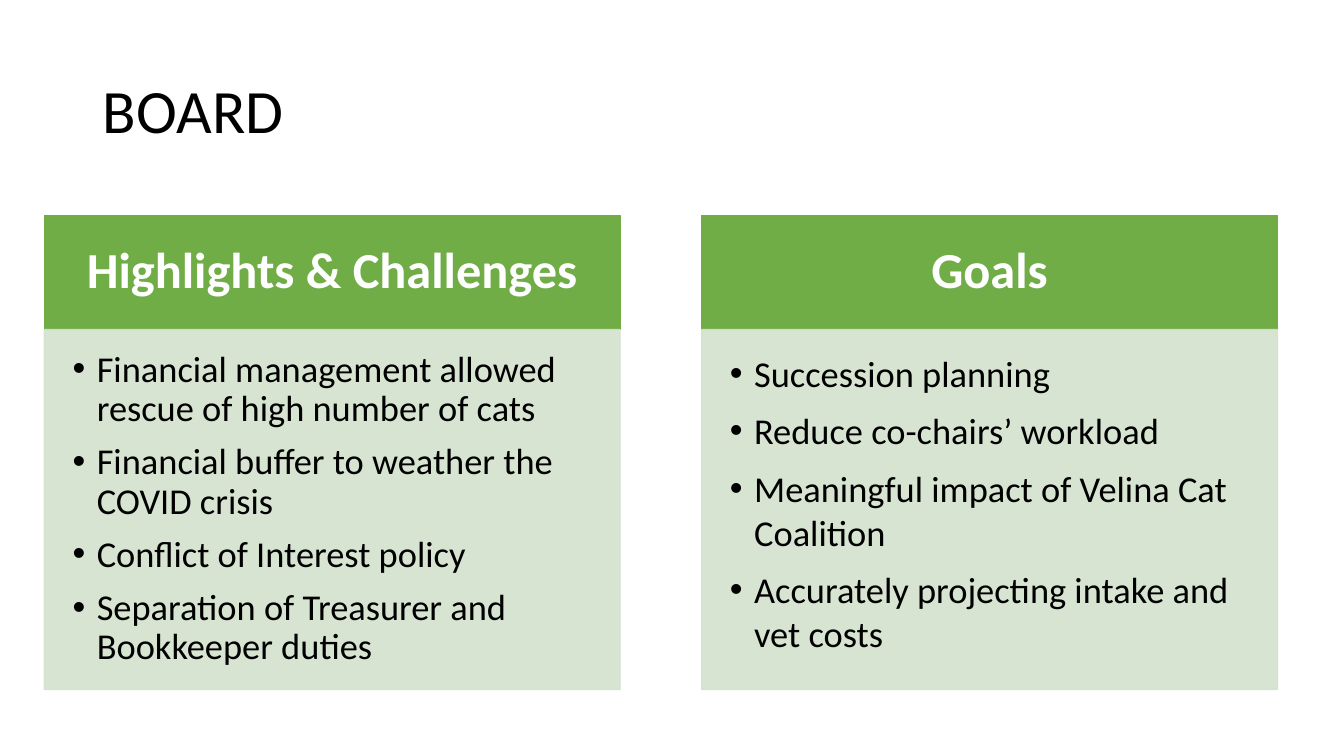
from lxml.etree import SubElement
from pptx import Presentation
from pptx.dml.color import RGBColor
from pptx.enum.shapes import MSO_SHAPE
from pptx.enum.text import MSO_ANCHOR, PP_ALIGN
from pptx.oxml.ns import qn
from pptx.util import Inches, Pt

FONT = "Calibri"
BLACK = RGBColor(0x00, 0x00, 0x00)
WHITE = RGBColor(0xFF, 0xFF, 0xFF)
GREEN = RGBColor(0x70, 0xAD, 0x47)
PALE_GREEN = RGBColor(0xD4, 0xE2, 0xCE)

PANEL_WIDTH = 5.71
HEADER_TOP, HEADER_HEIGHT = 2.14, 1.13
BODY_TOP, BODY_HEIGHT = HEADER_TOP + HEADER_HEIGHT, 3.57

# left edge, heading, line spacing of the list, list items
PANELS = [
    (0.44, "Highlights & Challenges", 0.9, [
        "Financial management allowed rescue of high number of cats",
        "Financial buffer to weather the COVID crisis",
        "Conflict of Interest policy",
        "Separation of Treasurer and Bookkeeper duties",
    ]),
    (6.96, "Goals", 1.0, [
        "Succession planning",
        "Reduce co-chairs’ workload",
        "Meaningful impact of Velina Cat Coalition",
        "Accurately projecting intake and vet costs",
    ]),
]


def set_font(p, size, color, bold=False):
    for r in p.runs:
        r.font.name = FONT
        r.font.size = Pt(size)
        r.font.bold = bold
        r.font.color.rgb = color


def set_opacity(s, percent):
    """Apply the opacity to both the fill and the line."""
    for clr in s._element.spPr.iter(qn("a:srgbClr")):
        SubElement(clr, qn("a:alpha"), val=str(percent * 1000))


def set_bullet(p):
    pPr = p._p.get_or_add_pPr()
    pPr.set("marL", str(Inches(0.31)))
    pPr.set("indent", str(Inches(-0.24)))
    clr = SubElement(pPr, qn("a:buClr"))
    SubElement(clr, qn("a:srgbClr"), val=str(BLACK))
    SubElement(pPr, qn("a:buFont"), typeface="Arial")
    SubElement(pPr, qn("a:buChar"), char="•")


def add_box(slide, left, top, height, color, insets, anchor):
    s = slide.shapes.add_shape(MSO_SHAPE.RECTANGLE, Inches(left), Inches(top),
                               Inches(PANEL_WIDTH), Inches(height))
    s.shadow.inherit = False
    s.fill.solid()
    s.fill.fore_color.rgb = color
    s.line.color.rgb = color
    s.line.width = Pt(1)
    tf = s.text_frame
    tf.word_wrap = True
    tf.vertical_anchor = anchor
    (tf.margin_left, tf.margin_top,
     tf.margin_right, tf.margin_bottom) = map(Inches, insets)
    return s


def add_header(slide, left, heading):
    s = add_box(slide, left, HEADER_TOP, HEADER_HEIGHT, GREEN,
                (0.28, 0.16, 0.28, 0.16), MSO_ANCHOR.MIDDLE)
    s.text_frame.text = heading
    p = s.text_frame.paragraphs[0]
    p.alignment = PP_ALIGN.CENTER
    p.line_spacing = 0.9
    set_font(p, 36, WHITE, bold=True)


def add_bullet_list(slide, left, items, line_spacing):
    s = add_box(slide, left, BODY_TOP, BODY_HEIGHT, PALE_GREEN,
                (0.21, 0.21, 0.28, 0.31), MSO_ANCHOR.TOP)
    set_opacity(s, 90)
    tf = s.text_frame
    tf.text = "\n".join(items)
    for i, p in enumerate(tf.paragraphs):
        set_bullet(p)
        p.alignment = PP_ALIGN.LEFT
        p.line_spacing = line_spacing
        p.space_before = Pt(10 if i else 0)
        set_font(p, 26, BLACK)


def set_title(slide, text):
    title = slide.shapes.title
    title.left, title.top = Inches(0.92), Inches(0.4)
    title.width, title.height = Inches(11.5), Inches(1.45)
    tf = title.text_frame
    tf.text = text
    tf.vertical_anchor = MSO_ANCHOR.MIDDLE
    p = tf.paragraphs[0]
    p.alignment = PP_ALIGN.LEFT
    p.line_spacing = 0.9
    set_font(p, 44, BLACK)


def main():
    prs = Presentation()
    prs.slide_width, prs.slide_height = Inches(13.33), Inches(7.5)
    slide = prs.slides.add_slide(prs.slide_layouts[5])
    set_title(slide, "BOARD")
    for left, heading, line_spacing, items in PANELS:
        add_header(slide, left, heading)
        add_bullet_list(slide, left, items, line_spacing)
    prs.save("out.pptx")


if __name__ == "__main__":
    main()
